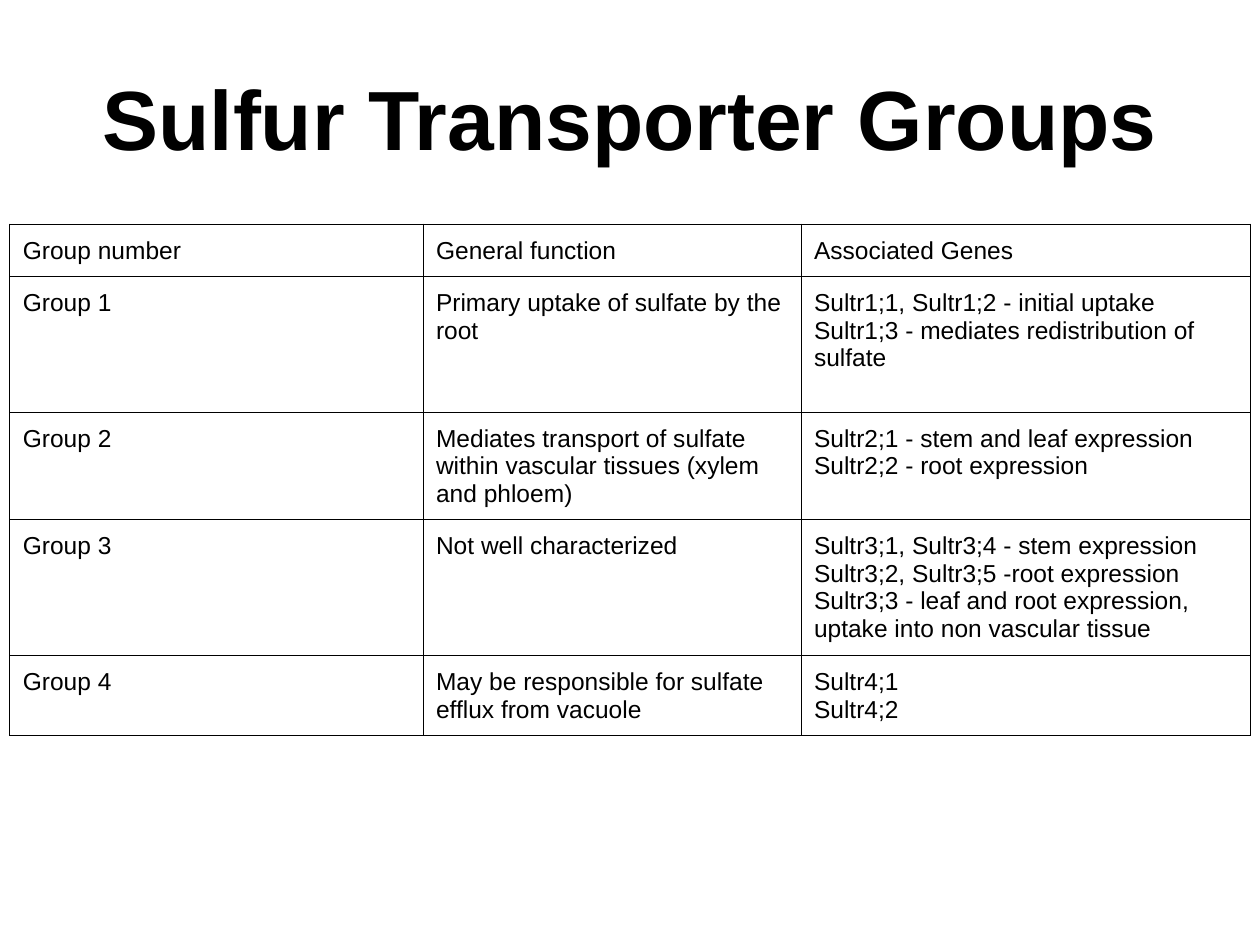
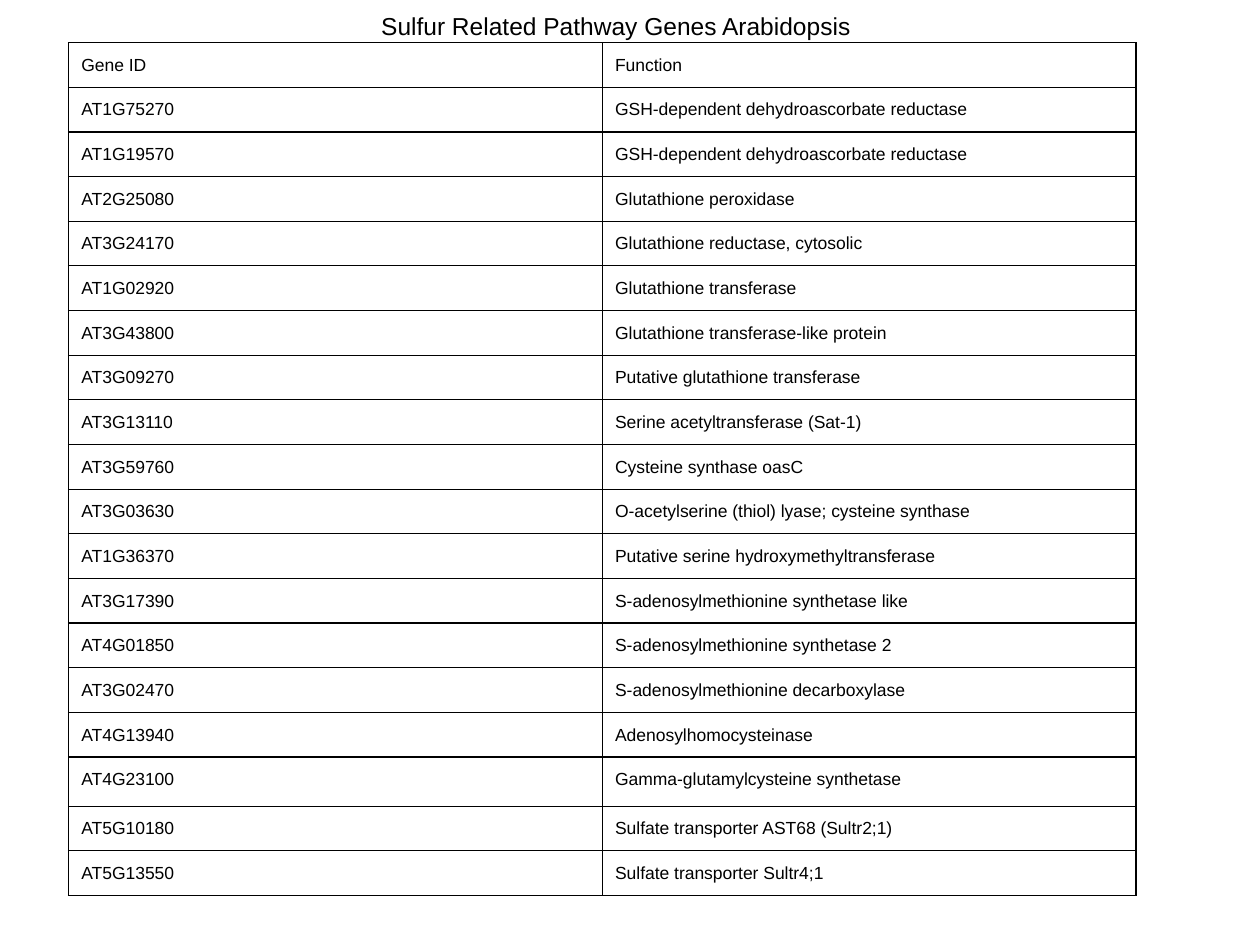
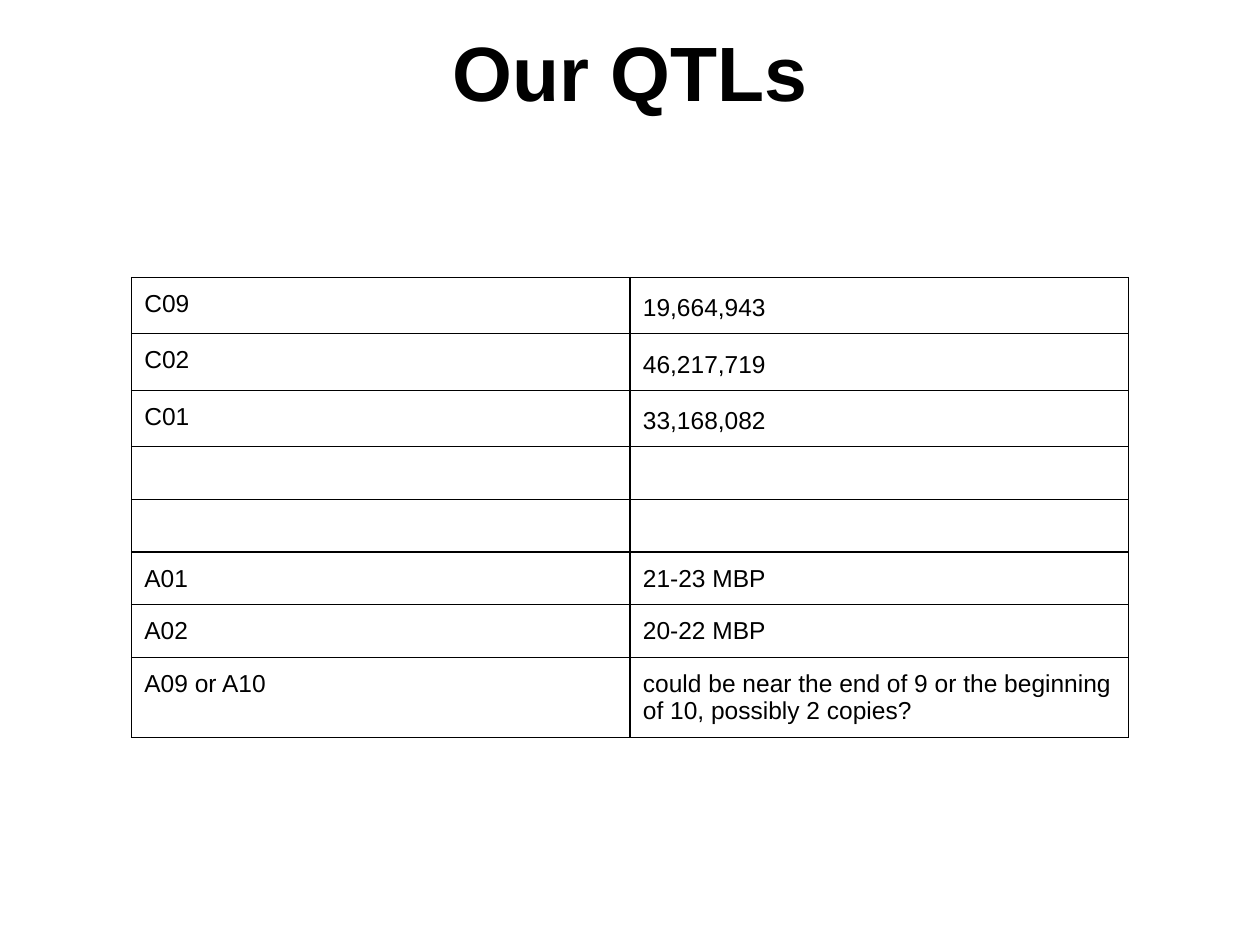
from lxml import etree
from pptx import Presentation
from pptx.dml.color import RGBColor
from pptx.enum.text import MSO_ANCHOR, PP_ALIGN
from pptx.oxml.ns import qn
from pptx.util import Cm, Pt

CENTER = PP_ALIGN.CENTER
TOP = MSO_ANCHOR.TOP
MIDDLE = MSO_ANCHOR.MIDDLE

COLORS = {"text": "000000", "border": "000000"}
FONT = "Arial"
INSET = Cm(0.26)
BOTTOM_INSET = Cm(0.08)
BORDER_WIDTH = Pt(0.75)
BORDER_SIDES = ("a:lnL", "a:lnR", "a:lnT", "a:lnB")

TRANSPORTER_GROUPS = [
    ("Group number", "General function", "Associated Genes"),
    ("Group 1", "Primary uptake of sulfate by the root",
     "Sultr1;1, Sultr1;2 - initial uptake\n"
     "Sultr1;3 - mediates redistribution of sulfate"),
    ("Group 2",
     "Mediates transport of sulfate within vascular tissues (xylem and phloem)",
     "Sultr2;1 - stem and leaf expression\nSultr2;2 - root expression"),
    ("Group 3", "Not well characterized",
     "Sultr3;1, Sultr3;4 - stem expression\n"
     "Sultr3;2, Sultr3;5 -root expression\n"
     "Sultr3;3 - leaf and root expression, uptake into non vascular tissue"),
    ("Group 4", "May be responsible for sulfate efflux from vacuole",
     "Sultr4;1\nSultr4;2"),
]

PATHWAY_GENES = [
    ("Gene ID", "Function"),
    ("AT1G75270", "GSH-dependent dehydroascorbate reductase"),
    ("AT1G19570", "GSH-dependent dehydroascorbate reductase"),
    ("AT2G25080", "Glutathione peroxidase"),
    ("AT3G24170", "Glutathione reductase, cytosolic"),
    ("AT1G02920", "Glutathione transferase"),
    ("AT3G43800", "Glutathione transferase-like protein"),
    ("AT3G09270", "Putative glutathione transferase"),
    ("AT3G13110", "Serine acetyltransferase (Sat-1)"),
    ("AT3G59760", "Cysteine synthase oasC"),
    ("AT3G03630", "O-acetylserine (thiol) lyase; cysteine synthase"),
    ("AT1G36370", "Putative serine hydroxymethyltransferase"),
    ("AT3G17390", "S-adenosylmethionine synthetase like"),
    ("AT4G01850", "S-adenosylmethionine synthetase 2"),
    ("AT3G02470", "S-adenosylmethionine decarboxylase"),
    ("AT4G13940", "Adenosylhomocysteinase"),
    ("AT4G23100", "Gamma-glutamylcysteine synthetase"),
    ("AT5G10180", "Sulfate transporter AST68 (Sultr2;1)"),
    ("AT5G13550", "Sulfate transporter Sultr4;1"),
]

QTLS = [
    ("C09", "19,664,943"),
    ("C02", "46,217,719"),
    ("C01", "33,168,082"),
    ("", ""),
    ("", ""),
    ("A01", "21-23 MBP"),
    ("A02", "20-22 MBP"),
    ("A09 or A10",
     "could be near the end of 9 or the beginning of 10, possibly 2 copies?"),
]


class Deck:
    def __init__(self):
        self.presentation = Presentation()
        self.presentation.slide_width = Cm(25.4)
        self.presentation.slide_height = Cm(19.05)
        self.slide = None

    def add_slide(self):
        layout = self.presentation.slide_layouts[6]
        self.slide = self.presentation.slides.add_slide(layout)

    def style_paragraph(self, paragraph, size, bold=False):
        font = paragraph.font
        font.name = FONT
        font.size = Pt(size)
        font.bold = bold
        font.color.rgb = RGBColor.from_string(COLORS["text"])

    def add_title(self, text, size, left=1.27, top=0.76, height=3.18,
                  bold=True, anchor=MIDDLE):
        box = self.slide.shapes.add_textbox(Cm(left), Cm(top), Cm(22.86), Cm(height))
        frame = box.text_frame
        frame.word_wrap = True
        frame.vertical_anchor = anchor
        frame.margin_left = frame.margin_right = INSET
        frame.margin_top = frame.margin_bottom = 0
        frame.text = text
        paragraph = frame.paragraphs[0]
        paragraph.alignment = CENTER
        self.style_paragraph(paragraph, size, bold)

    def add_borders(self, cell):
        properties = cell._tc.get_or_add_tcPr()
        for index, side in enumerate(BORDER_SIDES):
            line = etree.Element(qn(side), w=str(BORDER_WIDTH))
            fill = etree.SubElement(line, qn("a:solidFill"))
            etree.SubElement(fill, qn("a:srgbClr"), val=COLORS["border"])
            properties.insert(index, line)

    def fill_cell(self, cell, text, size, spacing):
        cell.text = text
        cell.margin_left = cell.margin_right = cell.margin_top = INSET
        cell.margin_bottom = BOTTOM_INSET
        cell.fill.background()
        self.add_borders(cell)
        for paragraph in cell.text_frame.paragraphs:
            self.style_paragraph(paragraph, size)
            if spacing:
                paragraph.line_spacing = spacing
            if not text:
                end = paragraph._p.get_or_add_endParaRPr()
                end.set("sz", str(size * 100))

    def add_table(self, rows, left, top, widths, heights, size, spacings=None):
        spacings = spacings or {}
        frame = self.slide.shapes.add_table(
            len(rows), len(widths), Cm(left), Cm(top),
            Cm(sum(widths)), Cm(sum(heights)))
        table = frame.table
        table.first_row = False
        table.horz_banding = False
        for column, width in zip(table.columns, widths):
            column.width = Cm(width)
        for row, height in zip(table.rows, heights):
            row.height = Cm(height)
        for row_index, texts in enumerate(rows):
            for column_index, text in enumerate(texts):
                position = (row_index, column_index)
                self.fill_cell(table.cell(*position), text, size,
                               spacings.get(position))


def main():
    deck = Deck()

    deck.add_slide()
    deck.add_title("Sulfur Transporter Groups", 48)
    deck.add_table(TRANSPORTER_GROUPS, 0.2, 4.52, [8.33, 7.62, 9.05],
                   [1.05, 2.74, 2.16, 2.74, 1.62], 14)

    deck.add_slide()
    deck.add_title("Sulfur Related Pathway Genes Arabidopsis", 14,
                   left=0.99, top=0, height=1.04, bold=False)
    deck.add_table(PATHWAY_GENES, 1.38, 0.86, [10.76] * 2,
                   [0.9] * 16 + [0.99] + [0.9] * 2, 10)

    deck.add_slide()
    deck.add_title("Our QTLs", 44, top=0.5, anchor=TOP)
    deck.add_table(QTLS, 2.65, 5.59, [10.05] * 2,
                   [1.14] * 3 + [1.06] * 4 + [1.62], 14,
                   {(row, 1): 1.15 for row in range(3)})

    deck.presentation.save("out.pptx")


if __name__ == "__main__":
    main()
